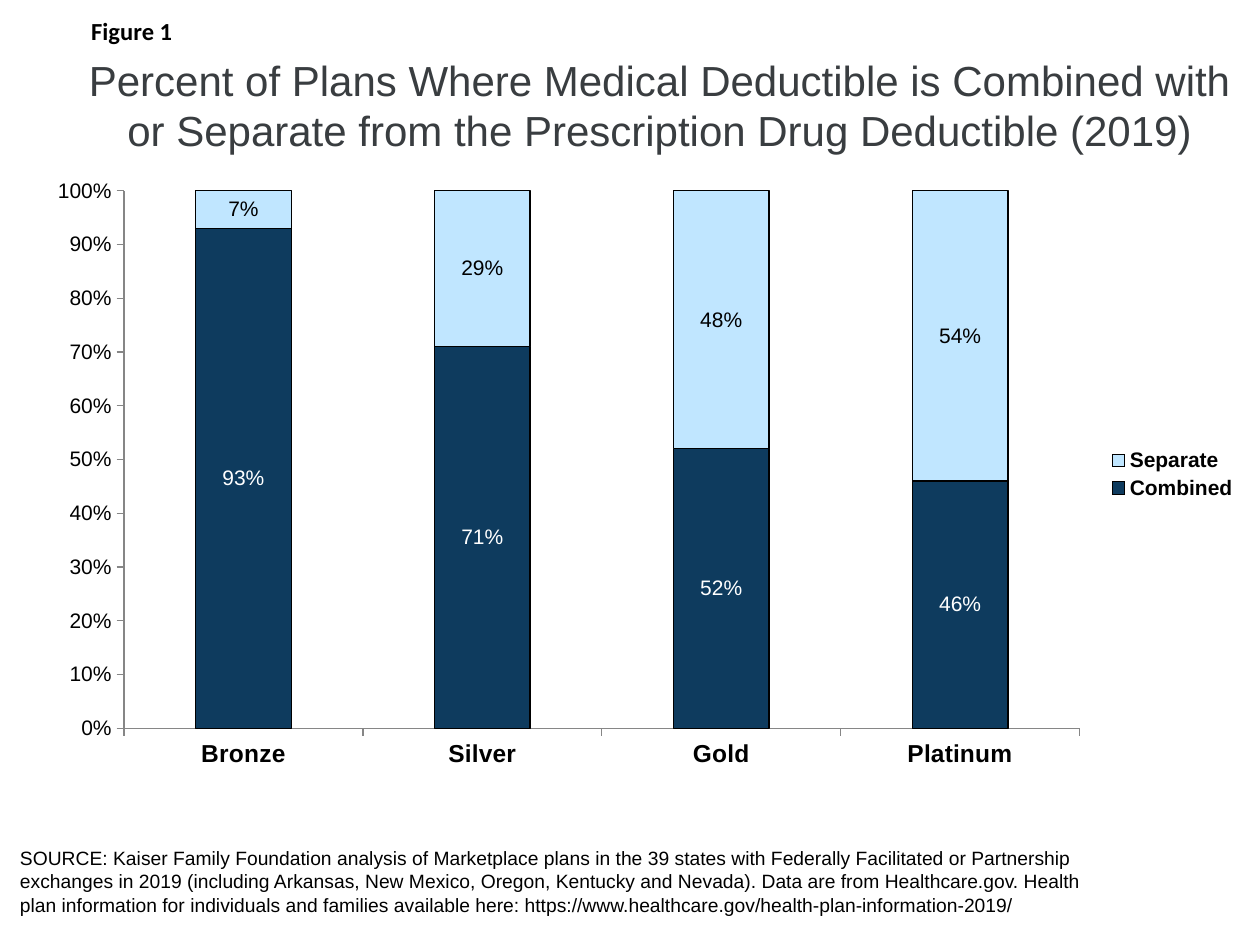
from lxml import etree
from pptx import Presentation
from pptx.chart.data import CategoryChartData
from pptx.dml.color import RGBColor
from pptx.enum.chart import XL_CHART_TYPE as ChartType, XL_LABEL_POSITION as LabelPosition
from pptx.enum.chart import XL_LEGEND_POSITION as LegendPosition, XL_TICK_MARK as TickMark
from pptx.enum.text import MSO_ANCHOR as Anchor, PP_ALIGN as Align
from pptx.oxml.ns import qn
from pptx.util import Inches, Pt

COLORS = {"black": "000000", "white": "FFFFFF", "title": "393D40",
          "navy": "0E3B5E", "sky": "C0E6FF", "axis": "868686"}
FIGURE = "Figure 1"
TITLE = ("Percent of Plans Where Medical Deductible is Combined with "
         "or Separate from the Prescription Drug Deductible (2019)")
SOURCE = ("SOURCE: Kaiser Family Foundation analysis of Marketplace plans in the 39 states "
          "with Federally Facilitated or Partnership exchanges in 2019 (including Arkansas, "
          "New Mexico, Oregon, Kentucky and Nevada). Data are from Healthcare.gov. Health plan "
          "information for individuals and families available here: "
          "https://www.healthcare.gov/health-plan-information-2019/")
METALS = ["Bronze", "Silver", "Gold", "Platinum"]
SERIES = [("Combined", [0.93, 0.71, 0.52, 0.46], "navy", "white"),
          ("Separate", [0.07, 0.29, 0.48, 0.54], "sky", "black")]


def rgb(name):
    """Return the named colour."""
    return RGBColor.from_string(COLORS[name])


def style_font(font, size, color="black", bold=False, face="Arial"):
    """Set face, size, weight and colour of a font."""
    font.name, font.size, font.bold = face, Pt(size), bold
    font.color.rgb = rgb(color)


def add_text(page, text, box, align=Align.LEFT, anchor=Anchor.TOP, **style):
    """Place one wrapped paragraph in a box given in inches."""
    frame = page.shapes.add_textbox(*map(Inches, box)).text_frame
    frame.word_wrap = True
    frame.vertical_anchor = anchor
    para = frame.paragraphs[0]
    para.alignment = align
    span = para.add_run()
    span.text = text
    style_font(span.font, **style)


def add_header(page, left, top):
    """Place the figure number and the title below it."""
    add_text(page, FIGURE, (left, top, 1.75, 0.34), align=Align.CENTER,
             size=14, bold=True, face="Calibri")
    add_text(page, TITLE, (left + 0.4, top + 0.25, 9.33, 1), align=Align.CENTER,
             anchor=Anchor.MIDDLE, size=24, color="title")


def set_plot_layout(chart, **fractions):
    """Fix the inner plot area as fractions of the chart."""
    area = chart._chartSpace.chart.plotArea
    for old in area.findall(qn("c:layout")):
        area.remove(old)
    layout = etree.Element(qn("c:layout"))
    manual = etree.SubElement(layout, qn("c:manualLayout"))
    settings = {"layoutTarget": "inner", "xMode": "edge", "yMode": "edge", **fractions}
    for tag, value in settings.items():
        etree.SubElement(manual, qn(f"c:{tag}")).set("val", str(value))
    area.insert(0, layout)


def style_axis(axis, size, bold=False):
    """Give an axis outward ticks, a thin line and label type."""
    axis.has_major_gridlines = False
    axis.major_tick_mark, axis.minor_tick_mark = TickMark.OUTSIDE, TickMark.NONE
    axis.format.line.color.rgb = rgb("axis")
    axis.format.line.width = Pt(0.75)
    style_font(axis.tick_labels.font, size, bold=bold)


def style_series(series, fill, label):
    """Fill and outline the bars and centre their value labels."""
    series.format.fill.solid()
    series.format.fill.fore_color.rgb = rgb(fill)
    series.format.line.color.rgb = rgb("black")
    series.format.line.width = Pt(0.75)
    labels = series.data_labels
    labels.show_value = True
    labels.number_format, labels.number_format_is_linked = "0%", False
    labels.position = LabelPosition.CENTER
    style_font(labels.font, 12, label)


def add_deductible_chart(page, box):
    """Place the stacked chart of plan shares by metal level."""
    data = CategoryChartData(number_format="0%")
    data.categories = METALS
    for name, values, *_ in SERIES:
        data.add_series(name, values)
    chart = page.shapes.add_chart(
        ChartType.COLUMN_STACKED_100, *map(Inches, box), data).chart
    chart.has_title = False
    style_font(chart.font, 18)
    plot = chart.plots[0]
    plot.gap_width, plot.overlap, plot.vary_by_categories = 150, 100, False
    for series, (_, _, fill, label) in zip(plot.series, SERIES):
        style_series(series, fill, label)
    style_axis(chart.category_axis, 14, bold=True)
    style_axis(chart.value_axis, 12)
    scale = chart.value_axis
    scale.minimum_scale, scale.maximum_scale, scale.major_unit = 0, 1, 0.1
    scale.tick_labels.number_format = "0%"
    scale.tick_labels.number_format_is_linked = False
    chart.has_legend = True
    chart.legend.position = LegendPosition.RIGHT
    chart.legend.include_in_layout = False
    style_font(chart.legend.font, 12, bold=True)
    set_plot_layout(chart, x=0.074, y=0.038, w=0.786, h=0.876)


def main():
    """Build and save the slide."""
    deck = Presentation()
    deck.slide_width, deck.slide_height = Inches(10), Inches(7.5)
    page = deck.slides.add_slide(deck.slide_layouts[6])
    add_header(page, 0.17, 0.08)
    add_deductible_chart(page, (0.27, 1.33, 9.65, 4.87))
    add_text(page, SOURCE, (0.06, 6.67, 8.78, 0.66), size=11)
    deck.save("out.pptx")


if __name__ == "__main__":
    main()
